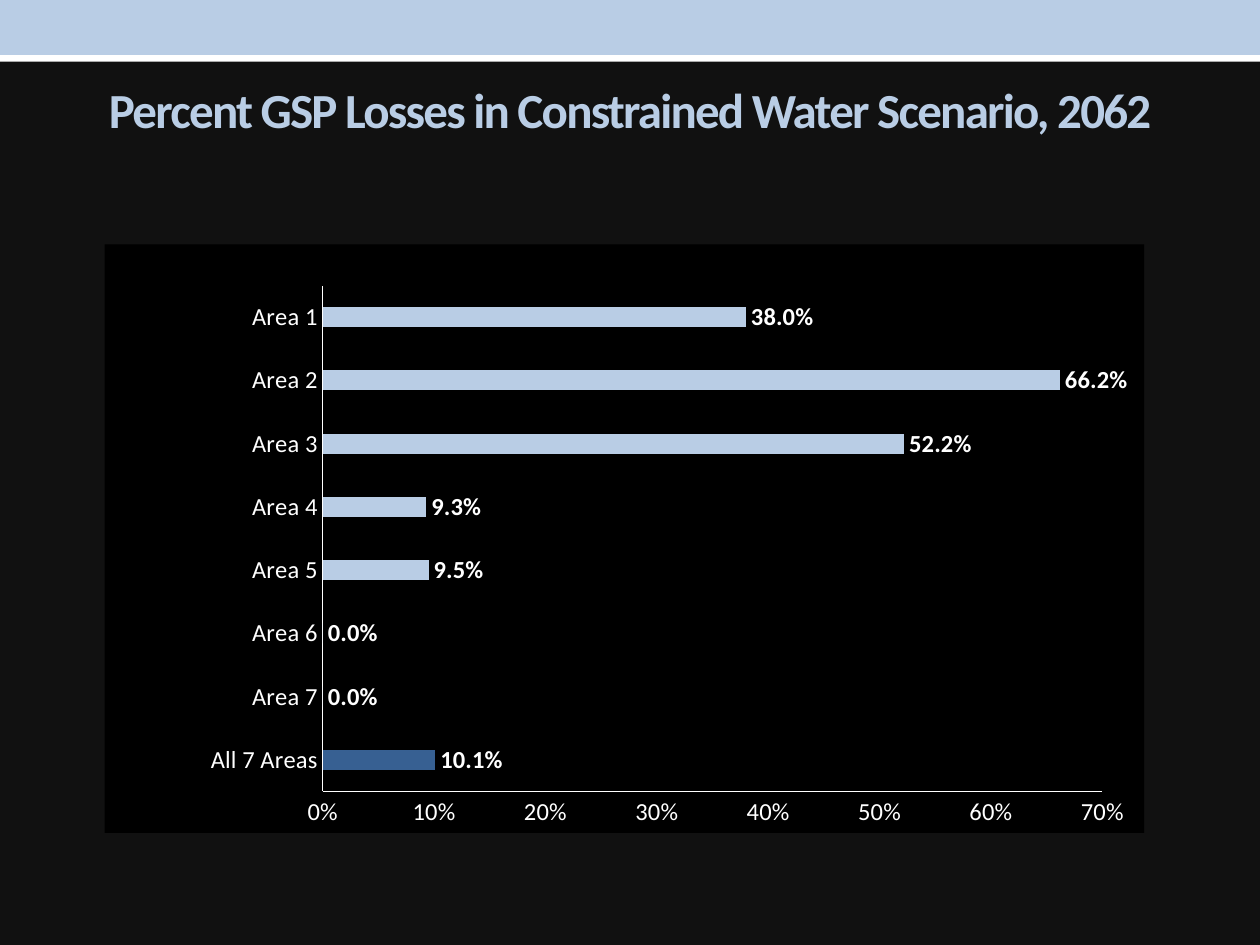
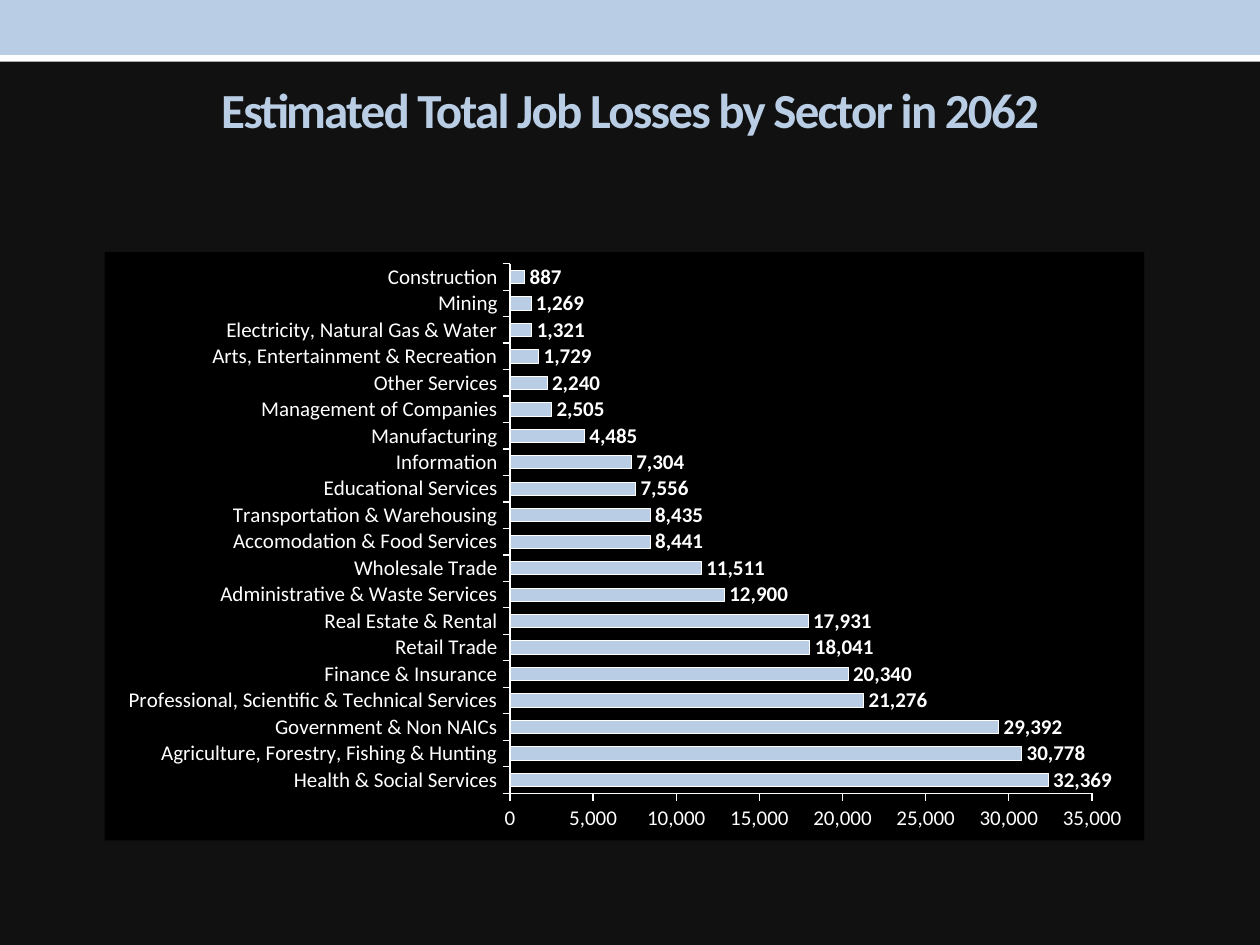
from lxml import etree
from pptx import Presentation
from pptx.chart.data import CategoryChartData
from pptx.dml.color import RGBColor
from pptx.enum.chart import XL_CHART_TYPE, XL_LABEL_POSITION, XL_TICK_MARK
from pptx.enum.shapes import MSO_SHAPE
from pptx.enum.text import MSO_ANCHOR, PP_ALIGN
from pptx.oxml import parse_xml
from pptx.util import Inches, Pt

BAR = XL_CHART_TYPE.BAR_CLUSTERED
OUT_END = XL_LABEL_POSITION.OUTSIDE_END
NO_TICK, OUT_TICK = XL_TICK_MARK.NONE, XL_TICK_MARK.OUTSIDE
RECT = MSO_SHAPE.RECTANGLE
TOP = MSO_ANCHOR.TOP
CENTER = PP_ALIGN.CENTER

BACK, BLACK, WHITE = "111111", "000000", "FFFFFF"
PALE, DEEP = "B9CDE5", "376092"
FACE = "Calibri"
NS_C = "http://schemas.openxmlformats.org/drawingml/2006/chart"
NS_A = "http://schemas.openxmlformats.org/drawingml/2006/main"

AREAS = [("All 7 Areas", 0.101), ("Area 7", 0), ("Area 6", 0),
         ("Area 5", 0.095), ("Area 4", 0.093), ("Area 3", 0.522),
         ("Area 2", 0.662), ("Area 1", 0.38)]

SECTORS = [
    ("Health & Social Services", 32369),
    ("Agriculture, Forestry, Fishing & Hunting", 30778),
    ("Government & Non NAICs", 29392),
    ("Professional, Scientific & Technical Services", 21276),
    ("Finance & Insurance", 20340),
    ("Retail Trade", 18041),
    ("Real Estate & Rental", 17931),
    ("Administrative & Waste Services", 12900),
    ("Wholesale Trade", 11511),
    ("Accomodation & Food Services", 8441),
    ("Transportation & Warehousing", 8435),
    ("Educational Services", 7556),
    ("Information", 7304),
    ("Manufacturing", 4485),
    ("Management of Companies", 2505),
    ("Other Services", 2240),
    ("Arts, Entertainment & Recreation", 1729),
    ("Electricity, Natural Gas & Water", 1321),
    ("Mining", 1269),
    ("Construction", 887),
]


def rgb(code):
    return RGBColor.from_string(code)


class Deck:
    """The shared style and the slide being built."""

    def __init__(self):
        self.prs = Presentation()
        self.prs.slide_width = Inches(10)
        self.prs.slide_height = Inches(7.5)
        self.slide = None

    def start(self, title):
        self.slide = self.prs.slides.add_slide(self.prs.slide_layouts[5])
        fill = self.slide.background.fill
        fill.solid()
        fill.fore_color.rgb = rgb(BACK)
        self.band(0.24, 0.25, WHITE)
        self.band(0, 0.42, PALE, 2.08)
        self.title(title)

    def band(self, top, height, color, line=0):
        box = self.slide.shapes.add_shape(
            RECT, 0, Inches(top), Inches(10), Inches(height))
        box.shadow.inherit = False
        box.fill.solid()
        box.fill.fore_color.rgb = rgb(color)
        if line:
            box.line.color.rgb = rgb(color)
            box.line.width = Pt(line)
        else:
            box.line.fill.background()

    def font(self, font, size, color=WHITE, bold=False):
        font.name = FACE
        font.size = Pt(size)
        font.bold = bold
        font.color.rgb = rgb(color)

    def title(self, text):
        box = self.slide.shapes.title
        box.left, box.top = Inches(0.5), Inches(0.58)
        box.width, box.height = Inches(9), Inches(1.08)
        frame = box.text_frame
        frame.word_wrap = True
        frame.vertical_anchor = TOP
        para = frame.paragraphs[0]
        para.alignment = CENTER
        run = para.add_run()
        run.text = text
        self.font(run.font, 28, PALE, True)
        run.font._element.set("spc", "-100")

    def axis(self, axis, size, tick):
        axis.has_major_gridlines = False
        axis.major_tick_mark = tick
        axis.minor_tick_mark = NO_TICK
        axis.format.line.color.rgb = rgb(WHITE)
        axis.format.line.width = Pt(0.75)
        self.font(axis.tick_labels.font, size)

    def frame(self, chart, area):
        """Fill the chart and fix the inner plot area (x, y, w, h shares)."""
        space = chart._chartSpace
        body = space.find(f"{{{NS_C}}}chart")
        body.addnext(parse_xml(
            f'<c:spPr xmlns:c="{NS_C}" xmlns:a="{NS_A}"><a:solidFill>'
            f'<a:srgbClr val="{BLACK}"/></a:solidFill>'
            '<a:ln><a:noFill/></a:ln></c:spPr>'))
        plot = body.find(f"{{{NS_C}}}plotArea")
        for old in plot.findall(f"{{{NS_C}}}layout"):
            plot.remove(old)
        layout = etree.Element(f"{{{NS_C}}}layout")
        manual = etree.SubElement(layout, f"{{{NS_C}}}manualLayout")
        marks = [("layoutTarget", "inner"), ("xMode", "edge"),
                 ("yMode", "edge"), *zip("xywh", map(str, area))]
        for tag, val in marks:
            etree.SubElement(manual, f"{{{NS_C}}}{tag}", val=val)
        plot.insert(0, layout)

    def bars(self, rows, top, area, size, tick, gap, step, peak,
             axis_fmt, label_fmt):
        data = CategoryChartData(number_format=label_fmt)
        data.categories = [name for name, _ in rows]
        data.add_series("Series 1", [val for _, val in rows])
        chart = self.slide.shapes.add_chart(
            BAR, Inches(0.83), Inches(top), Inches(8.25), Inches(4.67),
            data).chart
        chart.has_title = False
        chart.has_legend = False
        self.font(chart.font, size)
        self.frame(chart, area)

        self.axis(chart.category_axis, size, tick)
        scale = chart.value_axis
        self.axis(scale, size, tick)
        scale.minimum_scale, scale.maximum_scale = 0, peak
        scale.major_unit = step
        scale.tick_labels.number_format = axis_fmt
        scale.tick_labels.number_format_is_linked = False

        plot = chart.plots[0]
        plot.vary_by_categories = False
        plot.gap_width = gap
        series = plot.series[0]
        series.format.fill.solid()
        series.format.fill.fore_color.rgb = rgb(PALE)
        labels = series.data_labels
        labels.show_value = True
        labels.position = OUT_END
        labels.number_format = label_fmt
        labels.number_format_is_linked = False
        self.font(labels.font, size, bold=True)
        return series


def main():
    deck = Deck()

    deck.start("Percent GSP Losses in Constrained Water Scenario, 2062")
    losses = deck.bars(AREAS, 1.94, (0.21, 0.07, 0.75, 0.86), 14, NO_TICK,
                       219, 0.1, 0.7, "0%", "0.0%")
    total = losses.points[0].format.fill
    total.solid()
    total.fore_color.rgb = rgb(DEEP)

    deck.start("Estimated Total Job Losses by Sector in 2062")
    jobs = deck.bars(SECTORS, 2, (0.39, 0.02, 0.56, 0.9), 12, OUT_TICK,
                     100, 5000, 35000, "#,##0", "#,##0")
    jobs.format.line.color.rgb = rgb(WHITE)
    jobs.format.line.width = Pt(0.5)

    deck.prs.save("out.pptx")


if __name__ == "__main__":
    main()
